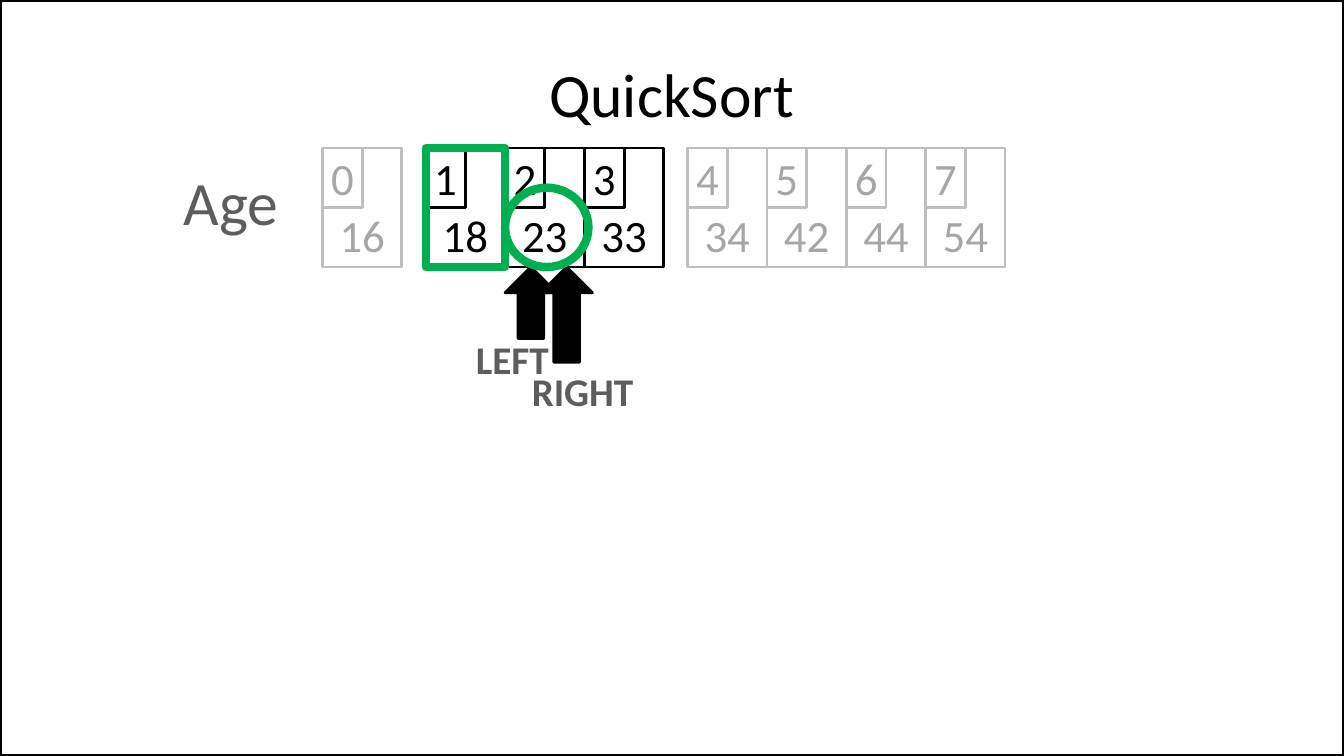
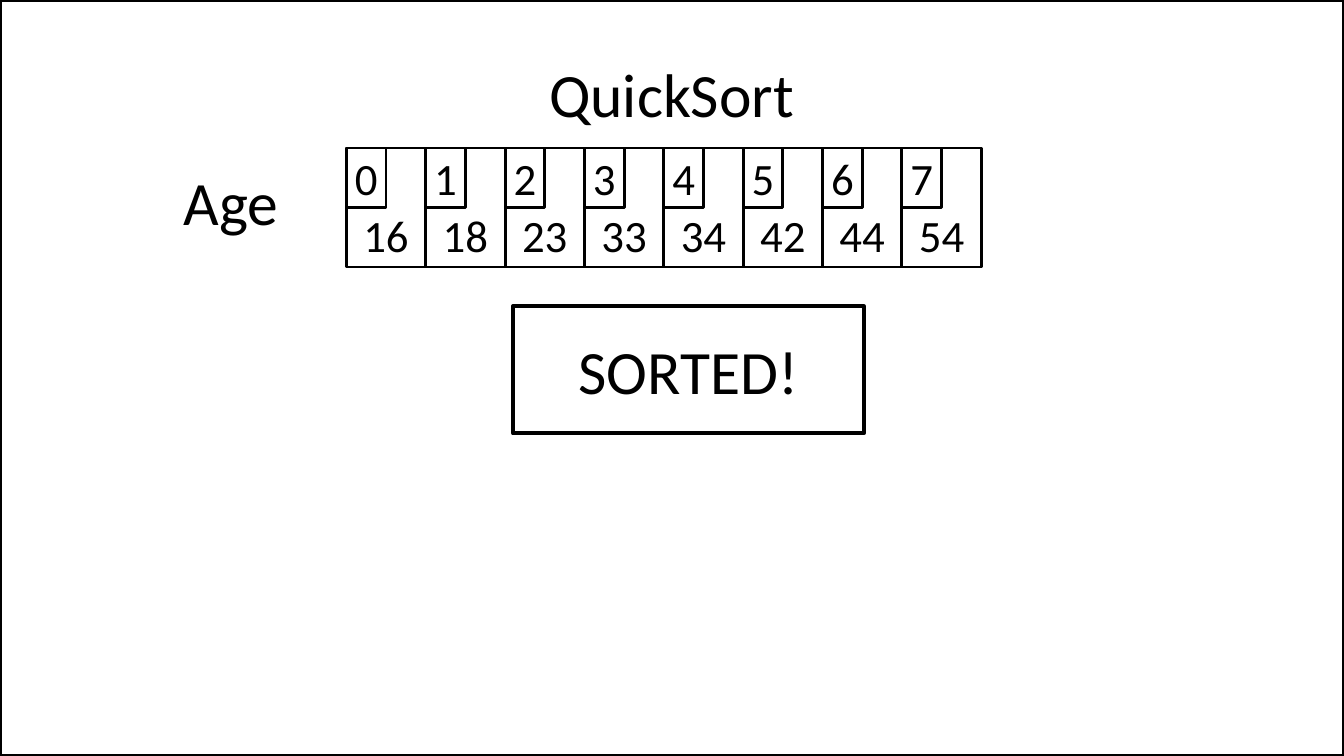
import pptx
import pptx.dml.color
import pptx.enum.shapes
import pptx.enum.text
import pptx.util

Cm = pptx.util.Cm
Pt = pptx.util.Pt
SHAPES = pptx.enum.shapes.MSO_SHAPE
ANCHOR = pptx.enum.text.MSO_ANCHOR

# Shared style, lengths in centimetres
FONT = "Calibri"
BLACK, GRAY, LIGHT_LINE, LIGHT_TEXT, GREEN = "000000", "5D5D5D", "BFBFBF", "A6A6A6", "00B050"
SLIDE_WIDTH, SLIDE_HEIGHT = 33.87, 19.05
CELL_WIDTH, CELL_HEIGHT = 2, 3
ARRAY_TOP = 3.73
GROUP_GAP = 0.6
AGES = [16, 18, 23, 33, 34, 42, 44, 54]


def color(hex_string):
    return pptx.dml.color.RGBColor.from_string(hex_string)


def write_text(shape, text, size=32, text_color=BLACK, bold=False,
               anchor=ANCHOR.MIDDLE, wrap=False, bottom=0):
    """Write one centred paragraph into a shape."""
    frame = shape.text_frame
    frame.word_wrap = wrap
    frame.vertical_anchor = anchor
    frame.margin_left = frame.margin_right = frame.margin_top = 0
    frame.margin_bottom = Cm(bottom)
    paragraph = frame.paragraphs[0]
    paragraph.alignment = pptx.enum.text.PP_ALIGN.CENTER
    run = paragraph.add_run()
    run.text = text
    run.font.name = FONT
    run.font.size = Pt(size)
    run.font.bold = bold
    run.font.color.rgb = color(text_color)


def add_outline(slide, kind, box, line=BLACK, weight=2, fill=None):
    shape = slide.shapes.add_shape(kind, *map(Cm, box))
    shape.shadow.inherit = False
    if fill:
        shape.fill.solid()
        shape.fill.fore_color.rgb = color(fill)
    else:
        shape.fill.background()
    shape.line.color.rgb = color(line)
    shape.line.width = Pt(weight)
    return shape


def add_label(slide, box, text, **text_format):
    write_text(slide.shapes.add_textbox(*map(Cm, box)), text, **text_format)


def add_slide(presentation, layout):
    """Add a slide with its title and row name area."""
    slide = presentation.slides.add_slide(layout)
    title = slide.shapes.title
    title.left, title.top, title.width, title.height = map(Cm, (1.69, 0.76, 30.48, 3.18))
    write_text(title, "QuickSort", size=44, wrap=True)
    return slide


def add_frame(slide, layout):
    """Draw the page border and keep it on the layout, behind everything."""
    border = add_outline(slide, SHAPES.RECTANGLE, (0, 0, SLIDE_WIDTH, SLIDE_HEIGHT), weight=3)
    layout.shapes.element.insert(2, border.element)


def add_cell(slide, left, top, index, line, text_color):
    """Draw one array cell: the value below, the index in its corner."""
    cell = add_outline(slide, SHAPES.RECTANGLE, (left, top, CELL_WIDTH, CELL_HEIGHT), line)
    write_text(cell, str(AGES[index]), text_color=text_color, anchor=ANCHOR.BOTTOM, bottom=0.13)
    corner = add_outline(slide, SHAPES.RECTANGLE,
                         (left, top, CELL_WIDTH / 2, CELL_HEIGHT / 2), line)
    write_text(corner, str(index), text_color=text_color)


def add_array(slide, left, top, groups, active, name_color=BLACK):
    """Draw the named array in groups of cells; return the left edge of each cell."""
    add_label(slide, (4.34, top + 0.26, 2.97, 2.13), "Age", size=44, text_color=name_color)
    edges = []
    for group in groups:
        for index in group:
            colors = (BLACK, BLACK) if index in active else (LIGHT_LINE, LIGHT_TEXT)
            add_cell(slide, left, top, index, *colors)
            edges.append(left)
            left += CELL_WIDTH
        left += GROUP_GAP
    return edges


def add_pointer(slide, left, top, height, label, label_box):
    """Draw an arrow up to the array with its label below."""
    add_outline(slide, SHAPES.UP_ARROW, (left, top, 1.3, height), fill=BLACK)
    add_label(slide, label_box, label, size=28, text_color=GRAY, bold=True)


def build_partition(slide):
    groups = [range(0, 1), range(1, 4), range(4, 8)]
    edges = add_array(slide, 8.13, ARRAY_TOP, groups, groups[1], name_color=GRAY)
    pivot, current = edges[1], edges[2]
    bottom = ARRAY_TOP + CELL_HEIGHT
    # Pivot cell
    add_outline(slide, SHAPES.RECTANGLE, (pivot, ARRAY_TOP, CELL_WIDTH, CELL_HEIGHT),
                line=GREEN, weight=6)
    # Pointers
    add_pointer(slide, current, bottom, 1.8, "LEFT", (current - 1, bottom + 1.6, 2.36, 1.45))
    add_pointer(slide, current + 0.9, bottom, 2.4, "RIGHT",
                (current + 0.4, bottom + 2.4, 3.1, 1.45))
    # Value being compared
    add_outline(slide, SHAPES.OVAL, (current, bottom - 2, 2.1, 2), line=GREEN, weight=6)


def build_sorted(slide):
    everything = range(len(AGES))
    add_array(slide, 8.73, ARRAY_TOP, [everything], everything)
    # Result box
    result = add_outline(slide, SHAPES.RECTANGLE, (12.93, 7.72, 8.84, 3.2), weight=3)
    write_text(result, "SORTED!", size=44)


def main():
    presentation = pptx.Presentation()
    presentation.slide_width = Cm(SLIDE_WIDTH)
    presentation.slide_height = Cm(SLIDE_HEIGHT)
    layout = presentation.slide_layouts.get_by_name("Title Only")
    partition = add_slide(presentation, layout)
    add_frame(partition, layout)
    build_partition(partition)
    build_sorted(add_slide(presentation, layout))
    presentation.save("out.pptx")


if __name__ == "__main__":
    main()
